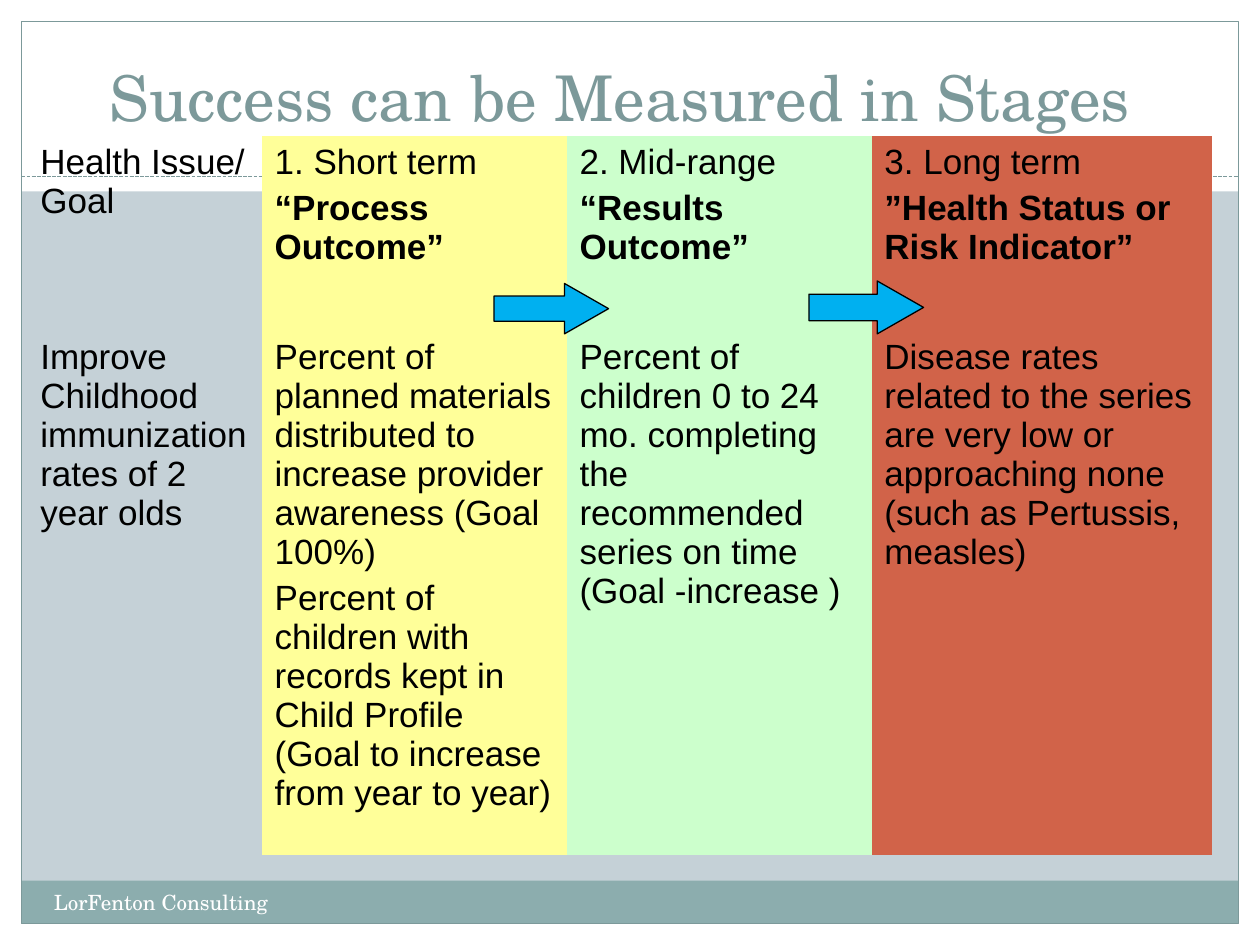
from dataclasses import dataclass
from typing import Optional

from lxml.etree import SubElement
from pptx import Presentation
from pptx.dml.color import RGBColor
from pptx.enum.dml import MSO_LINE
from pptx.enum.shapes import MSO_CONNECTOR, MSO_SHAPE
from pptx.enum.text import MSO_ANCHOR, PP_ALIGN
from pptx.oxml.ns import qn
from pptx.util import Inches, Pt

COLORS = {
    "background": "C5D1D7", "white": "FFFFFF", "black": "000000",
    "band": "8CADAE", "accent": "7C999A", "arrow": "00B0F0",
    "yellow": "FFFF99", "green": "CCFFCC", "red": "D16349",
}
HEADING_FONT = "TeX Gyre Schola"
BODY_FONT = "Arial"
NO_STYLE_NO_GRID = "{2D5ABB26-0587-4C30-8999-92F81FD0307C}"


@dataclass
class Box:
    left: float
    top: float
    width: float
    height: float
    fill: Optional[str] = None
    line: Optional[str] = None
    preset: MSO_SHAPE = MSO_SHAPE.RECTANGLE
    adjustments: tuple[float, ...] = ()

    def lengths(self) -> tuple:
        return tuple(Inches(n) for n in (self.left, self.top, self.width, self.height))


@dataclass
class Label:
    box: Box
    text: str
    size: int
    color: str
    alignment: PP_ALIGN = PP_ALIGN.LEFT
    anchor: MSO_ANCHOR = MSO_ANCHOR.TOP


@dataclass
class Stage:
    width: float
    fill: Optional[str]
    heading: list[str]
    measures: list[str]


FRAME = [
    Box(0, 7.33, 10, 0.17, "white"),
    Box(0, 0, 10, 1.52, "white"),
    Box(0, 0, 0.17, 7.5, "white"),
    Box(9.83, 0, 0.17, 7.5, "white"),
    Box(0.17, 6.99, 9.66, 0.34, "band"),
    Box(0.17, 0.17, 9.66, 7.16, line="accent"),
]
LABELS = [
    Label(Box(0.42, 0.26, 9, 0.85), "Success can be Measured in Stages", 36,
          "accent", PP_ALIGN.CENTER, MSO_ANCHOR.BOTTOM),
    Label(Box(0.33, 7.01, 3.92, 0.4), "LorFenton Consulting", 12, "white"),
]
STAGES = [
    Stage(1.86, None, ["Health Issue/ Goal"],
          ["Improve Childhood immunization rates of 2 year olds"]),
    Stage(2.42, "yellow", ["1. Short term", "“Process Outcome”"],
          ["Percent of planned materials distributed to increase provider awareness (Goal 100%)",
           "Percent of children with records kept in Child Profile "
           "(Goal to increase from year to year)"]),
    Stage(2.42, "green", ["2. Mid-range", "“Results Outcome”"],
          ["Percent of children 0 to 24 mo. completing the recommended series on time "
           "(Goal -increase )"]),
    Stage(2.7, "red", ["3. Long term", "”Health Status or Risk Indicator”"],
          ["Disease rates related to the series are very low or approaching none "
           "(such as Pertussis, measles)"]),
]
ROW_HEIGHTS = [1.55, 3.5]
ARROWS = [
    Box(left, top, 0.91, height, "arrow", "black", MSO_SHAPE.RIGHT_ARROW, (0.5, 0.875))
    for left, top, height in ((6.42, 2.23, 0.42), (3.92, 2.25, 0.4))
]


def rgb(name: str) -> RGBColor:
    """Return the named colour."""
    return RGBColor.from_string(COLORS[name])


def set_fill(fill, name: Optional[str]) -> None:
    """Fill with the named colour, or leave transparent."""
    if name is None:
        fill.background()
    else:
        fill.solid()
        fill.fore_color.rgb = rgb(name)


def style_font(font, name: str, size: int, color: str, bold: bool = False) -> None:
    """Apply typeface, size, colour and weight."""
    font.name, font.size, font.bold = name, Pt(size), bold
    font.color.rgb = rgb(color)


def draw_box(slide, box: Box) -> None:
    """Draw a preset shape."""
    shape = slide.shapes.add_shape(box.preset, *box.lengths())
    shape.shadow.inherit = False
    set_fill(shape.fill, box.fill)
    set_fill(shape.line.fill, box.line)
    if box.line:
        shape.line.width = Pt(0.75)
    for index, value in enumerate(box.adjustments):
        shape.adjustments[index] = value


def draw_divider(slide, left: float, right: float, top: float) -> None:
    """Draw the dashed line below the title."""
    connector = slide.shapes.add_connector(
        MSO_CONNECTOR.STRAIGHT, Inches(left), Inches(top), Inches(right), Inches(top))
    connector.line.color.rgb = rgb("accent")
    connector.line.width = Pt(0.75)
    connector.line.dash_style = MSO_LINE.SQUARE_DOT
    SubElement(connector.element.find(qn("p:spPr")), qn("a:effectLst"))


def draw_label(slide, label: Label) -> None:
    """Draw a line of heading text."""
    text_frame = slide.shapes.add_textbox(*label.box.lengths()).text_frame
    text_frame.word_wrap = True
    text_frame.vertical_anchor = label.anchor
    text_frame.text = label.text
    paragraph = text_frame.paragraphs[0]
    paragraph.alignment = label.alignment
    style_font(paragraph.runs[0].font, HEADING_FONT, label.size, label.color)


def fill_cell(cell, texts: list[str], fill: Optional[str], heading: bool) -> None:
    """Write a cell's paragraphs, with the outcome of a heading in bold."""
    set_fill(cell.fill, fill)
    cell.text_frame.text = "\n".join(texts)
    for index, paragraph in enumerate(cell.text_frame.paragraphs):
        paragraph.space_before = Pt(4 if index else 0)
        style_font(paragraph.runs[0].font, BODY_FONT, 20, "black", heading and index > 0)


def draw_stages(slide, left: float, top: float) -> None:
    """Draw the table of stages."""
    width = sum(stage.width for stage in STAGES)
    frame = slide.shapes.add_table(
        len(ROW_HEIGHTS), len(STAGES), Inches(left), Inches(top),
        Inches(width), Inches(sum(ROW_HEIGHTS)))
    frame.element.find(".//" + qn("a:tableStyleId")).text = NO_STYLE_NO_GRID
    table = frame.table
    table.first_row = table.horz_banding = False
    for row, height in zip(table.rows, ROW_HEIGHTS):
        row.height = Inches(height)
    for column, stage in enumerate(STAGES):
        table.columns[column].width = Inches(stage.width)
        fill_cell(table.cell(0, column), stage.heading, stage.fill, True)
        fill_cell(table.cell(1, column), stage.measures, stage.fill, False)


def main() -> None:
    """Build and save the slide."""
    presentation = Presentation()
    presentation.slide_width, presentation.slide_height = Inches(10), Inches(7.5)
    slide = presentation.slides.add_slide(presentation.slide_layouts[6])
    set_fill(slide.background.fill, "background")
    for box in FRAME:
        draw_box(slide, box)
    draw_divider(slide, 0.17, 9.83, 1.4)
    for label in LABELS:
        draw_label(slide, label)
    draw_stages(slide, 0.22, 1.08)
    for arrow in ARROWS:
        draw_box(slide, arrow)
    presentation.save("out.pptx")


if __name__ == "__main__":
    main()
